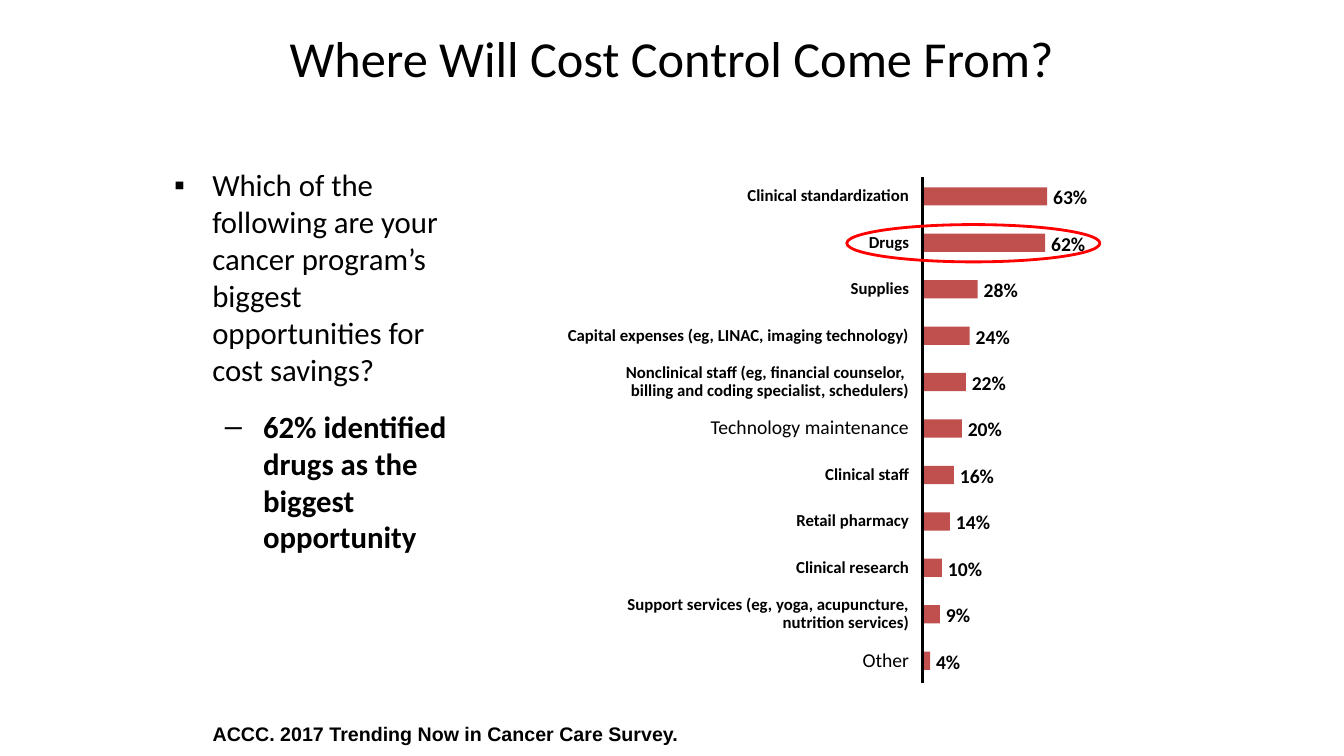
from copy import deepcopy
from dataclasses import dataclass

from lxml.etree import SubElement
from pptx import Presentation
from pptx.dml.color import RGBColor
from pptx.enum.shapes import MSO_CONNECTOR, MSO_SHAPE
from pptx.enum.text import MSO_ANCHOR, MSO_AUTO_SIZE, PP_ALIGN
from pptx.oxml.ns import qn
from pptx.util import Cm, Pt


@dataclass(frozen=True)
class Theme:
    ink: RGBColor = RGBColor(0x00, 0x00, 0x00)
    bar: RGBColor = RGBColor(0xC0, 0x50, 0x4D)
    highlight: RGBColor = RGBColor(0xFF, 0x00, 0x00)
    font: str = "Calibri"
    source_font: str = "Arial"
    title_size: int = 36
    body_size: int = 22
    value_size: int = 14
    label_size: int = 12


theme = Theme()


def add_text_frame(page, left, top, width, height, anchor=MSO_ANCHOR.MIDDLE):
    box = page.shapes.add_textbox(Cm(left), Cm(top), Cm(width), Cm(height))
    frame = box.text_frame
    frame.word_wrap = True
    frame.vertical_anchor = anchor
    return frame


def write(para, text, size, bold=False, font=theme.font, align=PP_ALIGN.LEFT,
          line_spacing=1.0, before=0, after=0, bullet=None, indent=0):
    """Fill a paragraph; a bullet hangs 0.96 cm to the left of the indent."""
    para.text = text
    para.alignment = align
    para.line_spacing = line_spacing
    para.space_before = Pt(before)
    para.space_after = Pt(after)
    if bullet:
        properties = para._p.get_or_add_pPr()
        properties.set("marL", str(Cm(indent)))
        properties.set("indent", str(-Cm(0.96)))
        SubElement(properties, qn("a:buFont"), typeface=theme.source_font)
        SubElement(properties, qn("a:buChar"), char=bullet)
    for span in para.runs:
        span.font.name = font
        span.font.size = Pt(size)
        span.font.bold = bold
        span.font.color.rgb = theme.ink
    for line_break in para._p.findall(qn("a:br")):
        line_break.append(deepcopy(para.runs[0]._r.rPr))


deck = Presentation()
deck.slide_width = Cm(33.87)
deck.slide_height = Cm(19.05)
page = deck.slides.add_slide(deck.slide_layouts[5])

# Title
title = page.shapes.title
title.left, title.top, title.width, title.height = Cm(4.23), Cm(-0.08), Cm(25.4), Cm(3.07)
title.text_frame.vertical_anchor = MSO_ANCHOR.MIDDLE
title.text_frame.auto_size = MSO_AUTO_SIZE.NONE
write(title.text_frame.paragraphs[0], "Where Will Cost Control Come From?",
      theme.title_size, align=PP_ALIGN.CENTER)

# Question and finding
question = add_text_frame(page, 4.14, 4.06, 8.05, 10.16, MSO_ANCHOR.TOP)
write(question.paragraphs[0],
      "Which of the following are your cancer program’s biggest opportunities for cost savings?",
      theme.body_size, after=7, bullet="▪", indent=0.96)
finding = question.add_paragraph()
finding.level = 1
write(finding, "62% identified drugs as the biggest opportunity",
      theme.body_size, bold=True, before=7, after=7, bullet="‒", indent=2.24)

# Survey bars: label, percentage, emphasised label
answers = [
    ("Clinical standardization", 63, True),
    ("Drugs", 62, True),
    ("Supplies", 28, True),
    ("Capital expenses (eg, LINAC, imaging technology)", 24, True),
    ("Nonclinical staff (eg, financial counselor, \nbilling and coding specialist, schedulers)", 22, True),
    ("Technology maintenance", 20, False),
    ("Clinical staff", 16, True),
    ("Retail pharmacy", 14, True),
    ("Clinical research", 10, True),
    ("Support services (eg, yoga, acupuncture,\nnutrition services)", 9, True),
    ("Other", 4, False),
]
axis_left = 23.24
first_middle, row_pitch = 4.95, 1.17
bar_height, cm_per_percent = 0.46, 0.05
label_width, label_height = 9.6, 1.2
value_width, value_height = 1.4, 0.8

for row, (label, percent, emphasised) in enumerate(answers):
    middle = first_middle + row * row_pitch
    length = percent * cm_per_percent

    bar = page.shapes.add_shape(MSO_SHAPE.RECTANGLE, Cm(axis_left), Cm(middle - bar_height / 2),
                                Cm(length), Cm(bar_height))
    bar.shadow.inherit = False
    bar.fill.solid()
    bar.fill.fore_color.rgb = theme.bar
    bar.line.fill.background()

    label_frame = add_text_frame(page, axis_left - 0.08 - label_width, middle - label_height / 2,
                                 label_width, label_height)
    write(label_frame.paragraphs[0], label,
          theme.label_size if emphasised else theme.value_size,
          bold=emphasised, align=PP_ALIGN.RIGHT, line_spacing=0.9)

    value_frame = add_text_frame(page, axis_left + length - 0.1, middle + 0.05 - value_height / 2,
                                 value_width, value_height)
    write(value_frame.paragraphs[0], f"{percent}%", theme.value_size, bold=True, line_spacing=0.9)

# Axis and highlighted answer
axis = page.shapes.add_connector(MSO_CONNECTOR.STRAIGHT, Cm(axis_left), Cm(4.47),
                                 Cm(axis_left), Cm(17.22))
axis.line.color.rgb = theme.ink
axis.line.width = Pt(2.25)
SubElement(axis._element.spPr, qn("a:effectLst"))

highlight = page.shapes.add_shape(MSO_SHAPE.OVAL, Cm(21.34), Cm(5.66), Cm(6.38), Cm(0.94))
highlight.shadow.inherit = False
highlight.fill.background()
highlight.line.color.rgb = theme.highlight
highlight.line.width = Pt(2)

# Source
source = add_text_frame(page, 5.11, 18.06, 16.69, 0.86, MSO_ANCHOR.BOTTOM)
write(source.paragraphs[0], "ACCC. 2017 Trending Now in Cancer Care Survey.",
      theme.value_size, bold=True, font=theme.source_font)

deck.save("out.pptx")
